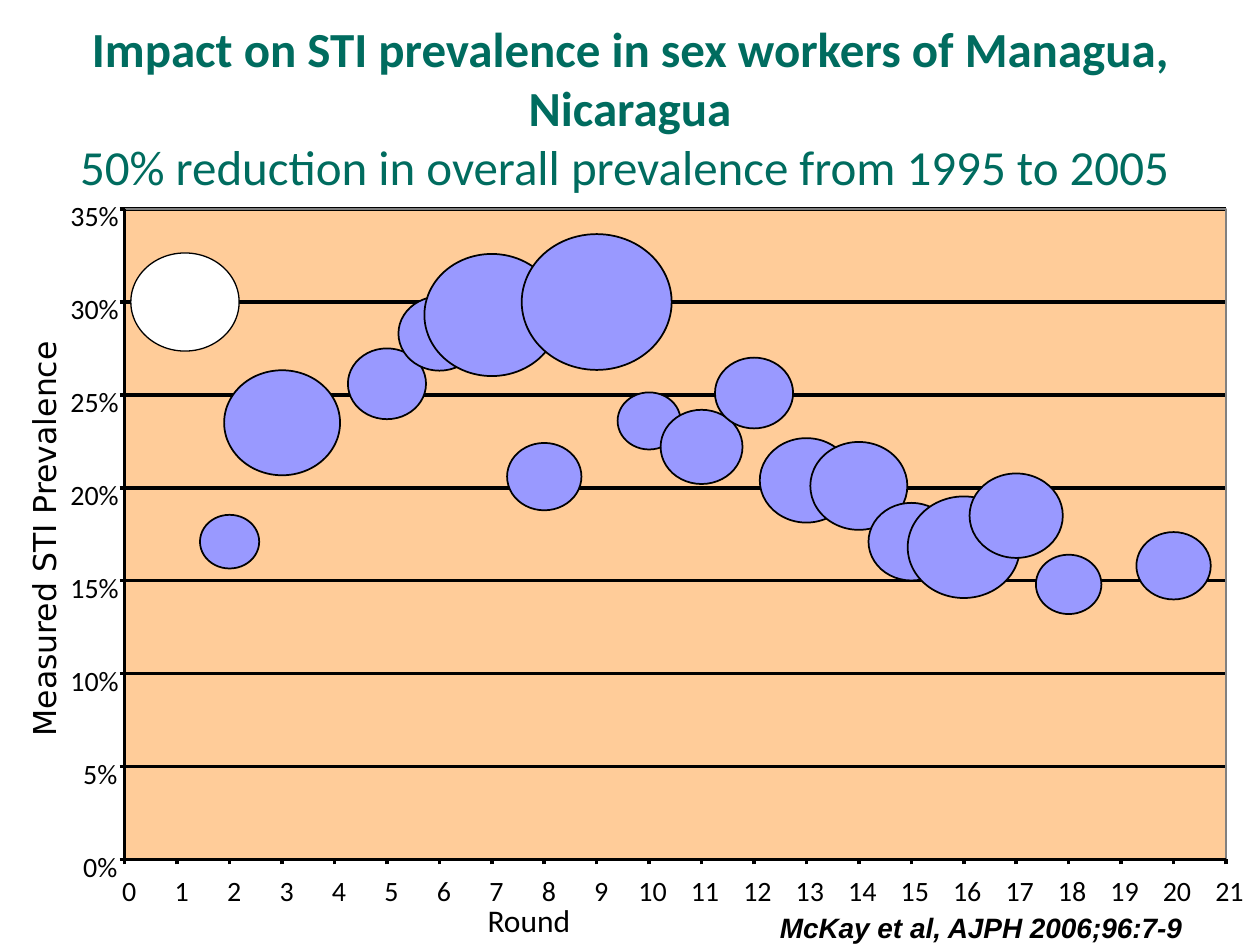
from lxml.etree import SubElement
from pptx import Presentation
from pptx.dml.color import RGBColor
from pptx.enum.shapes import MSO_CONNECTOR, MSO_SHAPE
from pptx.enum.text import MSO_ANCHOR, MSO_AUTO_SIZE, PP_ALIGN
from pptx.oxml.ns import qn
from pptx.util import Inches, Pt

GREEN = RGBColor(0x00, 0x6C, 0x5F)
PEACH = RGBColor(0xFF, 0xCC, 0x99)
LILAC = RGBColor(0x99, 0x99, 0xFF)
GRAY = RGBColor(0x80, 0x80, 0x80)
BLACK = RGBColor(0, 0, 0)
WHITE = RGBColor(0xFF, 0xFF, 0xFF)

TITLE = "Impact on STI prevalence in sex workers of Managua, Nicaragua"
SUBTITLE = "50% reduction in overall prevalence from 1995 to 2005 "
X_TITLE = "Round"
Y_TITLE = "Measured STI Prevalence"
CITATION = "McKay et al, AJPH 2006;96:7-9"

# round, prevalence in percent, bubble width in inches
BUBBLES = [
    (2, 17.1, 0.47), (3, 23.5, 0.92), (5, 25.6, 0.62), (6, 28.3, 0.65),
    (7, 29.3, 1.07), (8, 20.6, 0.59), (9, 30, 1.19), (10, 23.6, 0.5),
    (11, 22.2, 0.65), (12, 25.1, 0.62), (13, 20.4, 0.74), (14, 20.1, 0.77),
    (15, 17.1, 0.68), (16, 16.8, 0.89), (17, 18.5, 0.74), (18, 14.8, 0.52),
    (20, 15.8, 0.59),
]
FIRST_BUBBLE = (1.15, 30, 0.86)

LEFT, TOP, RIGHT, BOTTOM = 0.99, 1.66, 9.73, 6.82
ROUNDS, PERCENT_MAX, PERCENT_STEP = 21, 35, 5
TICK = 0.04
BUBBLE_RATIO = 0.906

presentation = Presentation()
presentation.slide_width, presentation.slide_height = Inches(10), Inches(7.5)
slide = presentation.slides.add_slide(presentation.slide_layouts[5])


def x_at(round_number):
    return LEFT + (RIGHT - LEFT) * round_number / ROUNDS


def y_at(percent):
    return BOTTOM - (BOTTOM - TOP) * percent / PERCENT_MAX


def format_run(run, size, font="Calibri", color=BLACK, bold=False, italic=False):
    run.font.size, run.font.name = Pt(size), font
    run.font.bold, run.font.italic = bold, italic
    run.font.color.rgb = color


def add_text(text, left, top, width, height, wrap=True, inset=True, rotation=0, **style):
    box = slide.shapes.add_textbox(*map(Inches, (left, top, width, height)))
    box.rotation = rotation
    frame = box.text_frame
    frame.word_wrap = wrap
    frame.auto_size = MSO_AUTO_SIZE.SHAPE_TO_FIT_TEXT
    if not inset:
        frame.margin_left = frame.margin_right = 0
        frame.margin_top = frame.margin_bottom = 0
    run = frame.paragraphs[0].add_run()
    run.text = text
    format_run(run, **style)


def add_line(x1, y1, x2, y2):
    line = slide.shapes.add_connector(
        MSO_CONNECTOR.STRAIGHT, *map(Inches, (x1, y1, x2, y2)))
    line.line.color.rgb = BLACK
    line.line.width = Pt(0)
    SubElement(line._element.spPr, qn("a:effectLst"))


def add_shape(kind, left, top, width, height, fill=None, line=None, weight=1):
    shape = slide.shapes.add_shape(kind, *map(Inches, (left, top, width, height)))
    shape.shadow.inherit = False
    if fill is None:
        shape.fill.background()
    else:
        shape.fill.solid()
        shape.fill.fore_color.rgb = fill
    if line is None:
        shape.line.fill.background()
    else:
        shape.line.color.rgb = line
        shape.line.width = Pt(weight)


def add_bubble(round_number, percent, width, fill=LILAC, weight=1):
    height = width * BUBBLE_RATIO
    add_shape(MSO_SHAPE.OVAL, x_at(round_number) - width / 2, y_at(percent) - height / 2,
              width, height, fill, BLACK, weight)


title = slide.shapes.title
title.left, title.top, title.width, title.height = map(Inches, (0, 0.03, 10, 1.64))
title.text_frame.auto_size = MSO_AUTO_SIZE.NONE
title.text_frame.vertical_anchor = MSO_ANCHOR.MIDDLE
paragraph = title.text_frame.paragraphs[0]
paragraph.alignment = PP_ALIGN.CENTER
heading = paragraph.add_run()
heading.text = TITLE
format_run(heading, 28, color=GREEN, bold=True)
paragraph.add_line_break()
subheading = paragraph.add_run()
subheading.text = SUBTITLE
format_run(subheading, 28, color=GREEN)

percents = range(0, PERCENT_MAX + 1, PERCENT_STEP)
plot_area = (LEFT, TOP, RIGHT - LEFT, BOTTOM - TOP)
add_shape(MSO_SHAPE.RECTANGLE, *plot_area, fill=PEACH)
for percent in percents:
    add_line(LEFT, y_at(percent), RIGHT, y_at(percent))
add_shape(MSO_SHAPE.RECTANGLE, *plot_area, line=GRAY)
add_line(LEFT, TOP, LEFT, BOTTOM)
add_line(LEFT, BOTTOM, RIGHT, BOTTOM)
for percent in percents:
    add_line(LEFT - TICK, y_at(percent), LEFT, y_at(percent))
for number in range(ROUNDS + 1):
    add_line(x_at(number), BOTTOM + TICK, x_at(number), BOTTOM)

for bubble in BUBBLES:
    add_bubble(*bubble)

for percent in percents:
    label_left, label_width = (0.66, 0.32) if percent < 10 else (0.56, 0.44)
    add_text(f"{percent}%", label_left, y_at(percent) - 0.08, label_width, 0.27,
             wrap=False, inset=False, size=16)
for number in range(ROUNDS + 1):
    label_width = 0.12 if number < 10 else 0.25
    add_text(str(number), x_at(number) + 0.04 - label_width / 2, 6.93, label_width, 0.27,
             wrap=False, inset=False, size=16)

add_text(X_TITLE, 3.87, 7.15, 1.57, 0.3, inset=False, size=18)
add_text(Y_TITLE, -1.44, 3.91, 3.57, 0.3, inset=False, rotation=270,
         size=18, font="DejaVu Sans")
add_bubble(*FIRST_BUBBLE, fill=WHITE, weight=0.75)
add_text(CITATION, 6.09, 7.18, 3.91, 0.7, size=16, font="Arial", bold=True, italic=True)

presentation.save("out.pptx")
